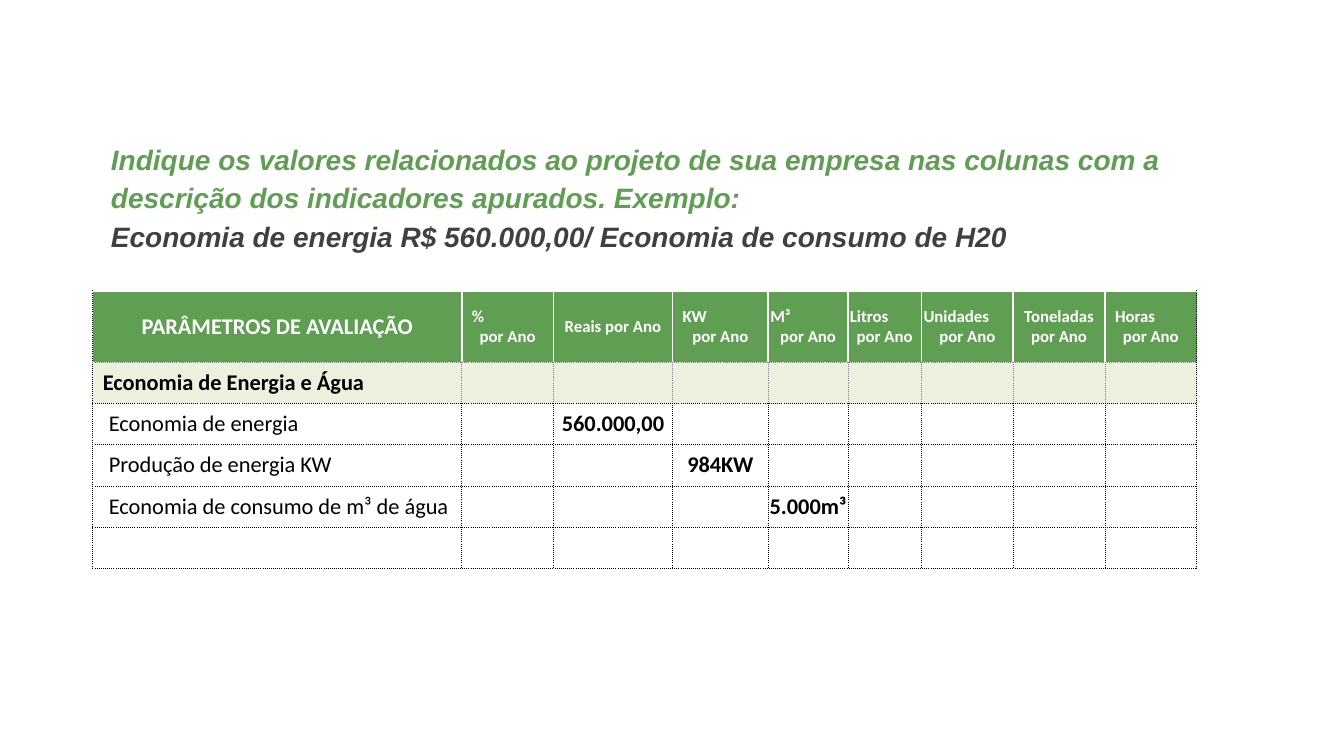
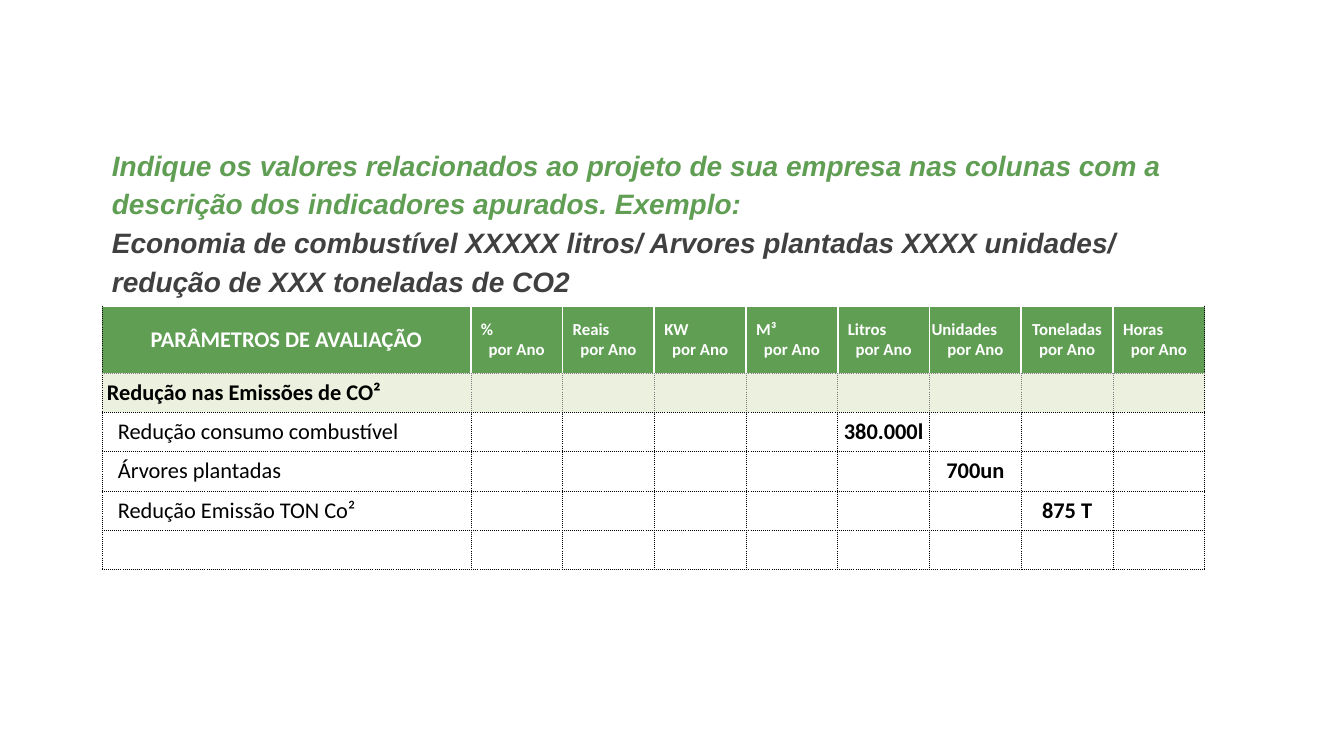
import pptx
import pptx.util
import pptx.dml.color
import pptx.enum.text
import pptx.oxml.ns
from lxml import etree

Inches = pptx.util.Inches
Pt = pptx.util.Pt
RGBColor = pptx.dml.color.RGBColor
ALIGN = pptx.enum.text.PP_ALIGN
ANCHOR = pptx.enum.text.MSO_ANCHOR

GREEN = RGBColor(0x60, 0x9E, 0x54)
PALE_GREEN = RGBColor(0xEB, 0xF1, 0xDE)
DARK_GRAY = RGBColor(0x40, 0x40, 0x40)
GRAY = RGBColor(0x80, 0x80, 0x80)
BLACK = RGBColor(0, 0, 0)
WHITE = RGBColor(0xFF, 0xFF, 0xFF)

INSTRUCTION = ("Indique os valores relacionados ao projeto de sua empresa nas colunas com a "
               "descrição dos indicadores apurados. Exemplo:")
UNITS = ["%", "Reais", "KW", "M³", "Litros", "Unidades", "Toneladas", "Horas"]
PARAMETER_WIDTH = 3.66
UNIT_WIDTH = 0.91

evaluations = [
    {
        "example": "Economia de energia R$ 560.000,00/ Economia de consumo de H20",
        "title_box": (1, 1.31, 10.79, 1.26),
        "table_corner": (0.92, 2.89),
        "unit_widths": [UNIT_WIDTH, 1.18, 0.95, 0.79, 0.73] + [UNIT_WIDTH] * 3,
        "header_height": 0.7,
        "row_height": 0.41,
        "section": "Economia de Energia e Água",
        "section_indent": 0.1,
        "indicators": [
            ("Economia de energia", "Reais", "560.000,00"),
            ("Produção de energia KW", "KW", "984KW"),
            ("Economia de consumo de m³ de água", "M³", "5.000m³"),
        ],
    },
    {
        "example": "Economia de combustível XXXXX litros/ Arvores plantadas XXXX unidades/ "
                   "redução de XXX toneladas de CO2",
        "title_box": (1.01, 1.37, 10.79, 1.65),
        "table_corner": (1.01, 3.04),
        "unit_widths": [UNIT_WIDTH] * 8,
        "header_height": 0.66,
        "row_height": 0.39,
        "section": "Redução nas Emissões de CO²",
        "section_indent": 0.05,
        "indicators": [
            ("Redução consumo combustível", "Litros", "380.000l"),
            ("Árvores plantadas", "Unidades", "700un"),
            ("Redução Emissão TON Co²", "Toneladas", "875 T"),
        ],
    },
]


def write_cell(cell, text, size, color, bold, align, indent=0):
    cell.text_frame.text = text
    cell.margin_left = Inches(indent)
    for paragraph in cell.text_frame.paragraphs:
        paragraph.alignment = align
        for run in paragraph.runs:
            run.font.name = "Calibri"
            run.font.size = Pt(size)
            run.font.bold = bold
            run.font.color.rgb = color


def add_border(cell, side, color):
    solid = color == WHITE
    line = etree.SubElement(cell._tc.get_or_add_tcPr(), pptx.oxml.ns.qn(f"a:ln{side}"),
                            w=str(Pt(1.5 if solid else 0.5)))
    fill = etree.SubElement(line, pptx.oxml.ns.qn("a:solidFill"))
    etree.SubElement(fill, pptx.oxml.ns.qn("a:srgbClr"), val=str(color))
    etree.SubElement(line, pptx.oxml.ns.qn("a:prstDash"), val="solid" if solid else "dot")


presentation = pptx.Presentation()
presentation.slide_width = Inches(13.33)
presentation.slide_height = Inches(7.5)

for evaluation in evaluations:
    slide = presentation.slides.add_slide(presentation.slide_layouts[5])

    title = slide.shapes.title
    title.left, title.top, title.width, title.height = map(Inches, evaluation["title_box"])
    title.text_frame.text = INSTRUCTION + "\n" + evaluation["example"]
    title.text_frame.word_wrap = True
    title.text_frame.auto_size = pptx.enum.text.MSO_AUTO_SIZE.SHAPE_TO_FIT_TEXT
    title.text_frame.vertical_anchor = ANCHOR.TOP
    for paragraph, color in zip(title.text_frame.paragraphs, (GREEN, DARK_GRAY)):
        paragraph.alignment = ALIGN.LEFT
        paragraph.line_spacing = 1.15
        font = paragraph.runs[0].font
        font.name = "Arial"
        font.size = Pt(20)
        font.bold = True
        font.italic = True
        font.color.rgb = color

    widths = [PARAMETER_WIDTH] + evaluation["unit_widths"]
    heights = [evaluation["header_height"]] + [evaluation["row_height"]] * 5
    left, top = evaluation["table_corner"]
    table = slide.shapes.add_table(len(heights), len(widths), Inches(left), Inches(top),
                                   Inches(sum(widths)), Inches(sum(heights))).table
    table.first_row = False
    table.horz_banding = False
    for column, width in zip(table.columns, widths):
        column.width = Inches(width)
    for row, height in zip(table.rows, heights):
        row.height = Inches(height)

    row_fills = [GREEN, PALE_GREEN] + [WHITE] * 4
    inner_colors = [WHITE, GRAY] + [BLACK] * 4
    rule_colors = [WHITE, GRAY] + [BLACK] * 5
    for r in range(len(heights)):
        for c in range(len(widths)):
            cell = table.cell(r, c)
            cell.margin_left = cell.margin_right = cell.margin_top = cell.margin_bottom = 0
            cell.vertical_anchor = ANCHOR.MIDDLE
            add_border(cell, "L", BLACK if c == 0 else inner_colors[r])
            add_border(cell, "R", BLACK if c == len(widths) - 1 else inner_colors[r])
            add_border(cell, "T", rule_colors[r])
            add_border(cell, "B", rule_colors[r + 1])
            cell.fill.solid()
            cell.fill.fore_color.rgb = row_fills[r]

    write_cell(table.cell(0, 0), "PARÂMETROS DE AVALIAÇÃO", 16, WHITE, True, ALIGN.CENTER)
    for c, unit in enumerate(UNITS, start=1):
        unit_cell = table.cell(0, c)
        one_line = widths[c] > 1
        write_cell(unit_cell, unit + (" " if one_line else "\n") + "por Ano",
                   12, WHITE, True, ALIGN.CENTER)
        if not one_line and unit != "Toneladas":
            unit_line = unit_cell.text_frame.paragraphs[0]
            unit_line.alignment = ALIGN.LEFT
            tight = unit == "Unidades" or widths[c] < UNIT_WIDTH
            unit_line._p.get_or_add_pPr().set("marL", str(Inches(0.02 if tight else 0.1)))

    write_cell(table.cell(1, 0), evaluation["section"], 16, BLACK, True, ALIGN.LEFT,
               evaluation["section_indent"])
    for r, (indicator, unit, amount) in enumerate(evaluation["indicators"], start=2):
        write_cell(table.cell(r, 0), indicator, 16, BLACK, False, ALIGN.LEFT, 0.16)
        write_cell(table.cell(r, UNITS.index(unit) + 1), amount, 16, BLACK, True, ALIGN.CENTER)

presentation.save("out.pptx")
